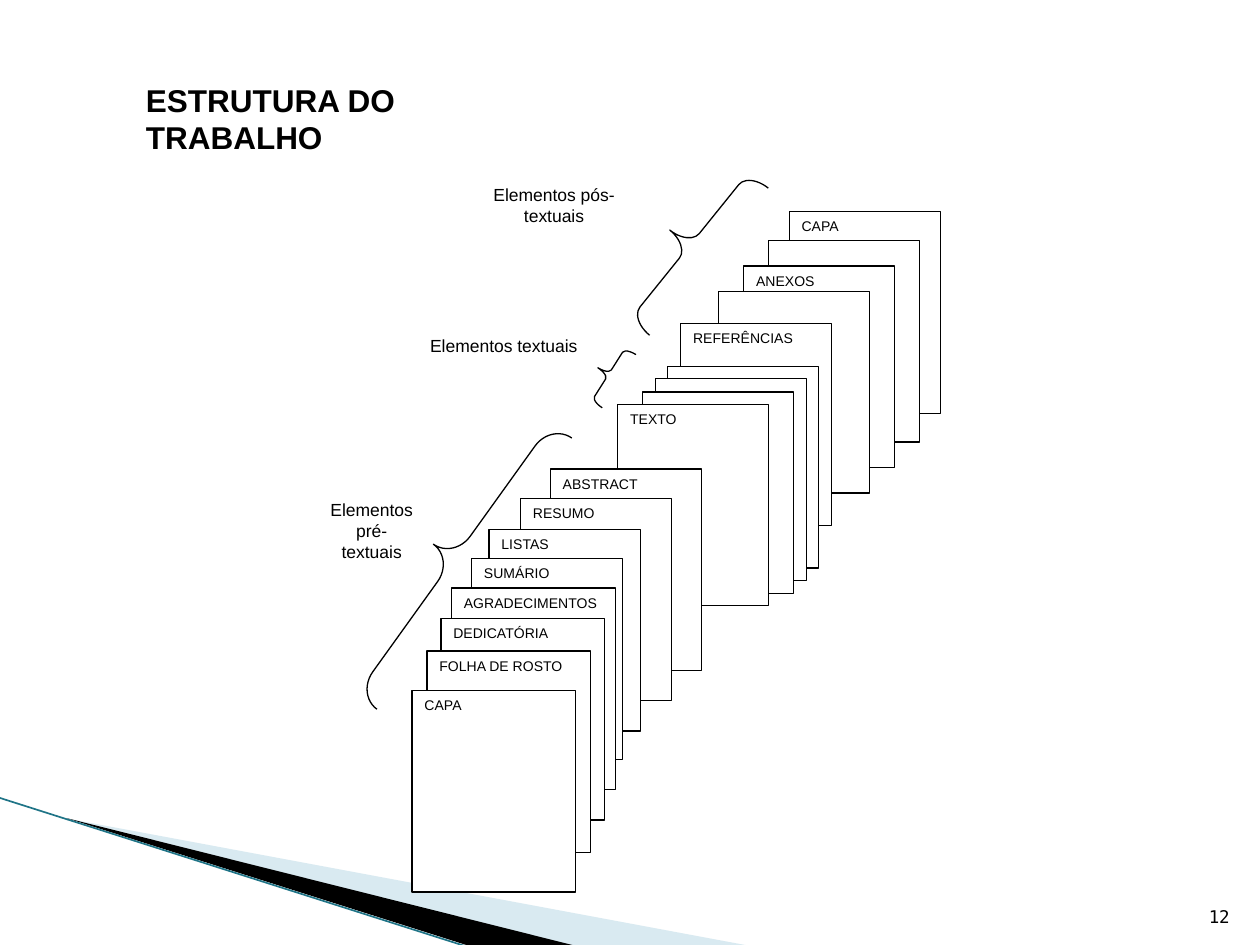
from lxml import etree
from pptx import Presentation
from pptx.dml.color import RGBColor
from pptx.enum import shapes, text
from pptx.oxml import ns
from pptx.util import Pt

BLACK = RGBColor(0x00, 0x00, 0x00)
WHITE = RGBColor(0xFF, 0xFF, 0xFF)
PALE_BLUE = RGBColor(0xA0, 0xCB, 0xDC)
TEAL = RGBColor(0x1F, 0x74, 0x87)

SANS = "Arial"
CARD_H = 115.2
NARROW, WIDE = 86.4, 93.6


def write(sp, words, size, align=text.PP_ALIGN.LEFT, anchor=text.MSO_ANCHOR.TOP,
          font=SANS, bold=False):
    tf = sp.text_frame
    tf.word_wrap = True
    tf.vertical_anchor = anchor
    p = tf.paragraphs[0]
    p.text = words
    p.alignment = align
    p.font.size = Pt(size)
    p.font.name = font
    p.font.bold = bold
    p.font.color.rgb = BLACK


def add_box(s, left, top, width, height, outlined=True):
    sp = s.shapes.add_shape(shapes.MSO_SHAPE.RECTANGLE,
                            Pt(left), Pt(top), Pt(width), Pt(height))
    sp.shadow.inherit = False
    sp.fill.solid()
    sp.fill.fore_color.rgb = WHITE
    if outlined:
        sp.line.color.rgb = BLACK
        sp.line.width = Pt(0.75)
    else:
        sp.line.fill.background()
    return sp


def add_brace(s, left, top, width, height, rotation, curve):
    sp = s.shapes.add_shape(shapes.MSO_SHAPE.LEFT_BRACE,
                            Pt(left), Pt(top), Pt(width), Pt(height))
    sp.shadow.inherit = False
    sp.rotation = rotation
    sp.adjustments[0] = curve
    sp.adjustments[1] = 0.5
    sp.fill.background()
    sp.line.color.rgb = BLACK
    sp.line.width = Pt(0.75)


def add_wedge(s, points, color, opacity=100):
    (x, y), *rest = [(Pt(x), Pt(y)) for x, y in points]
    builder = s.shapes.build_freeform(x, y)
    builder.add_line_segments(rest)
    sp = builder.convert_to_shape()
    sp.shadow.inherit = False
    sp.fill.solid()
    sp.fill.fore_color.rgb = color
    sp.line.fill.background()
    if opacity < 100:
        clr = sp.fill._xPr.find(".//" + ns.qn("a:srgbClr"))
        etree.SubElement(clr, ns.qn("a:alpha"), val=str(opacity * 1000))


def add_corner(s, left, top):
    """Decorative wedges and edge line at the lower left."""
    def at(*points):
        return [(left + x, top + y) for x, y in points]

    add_wedge(s, at((39.5, 12), (428.5, 84.5), (328, 84.5)), PALE_BLUE, 40)
    add_wedge(s, at((38, 11.5), (329, 84.5), (268, 84.5)), BLACK)
    line = s.shapes.add_connector(shapes.MSO_CONNECTOR.STRAIGHT, Pt(left), Pt(top),
                                  Pt(left + 267), Pt(top + 85))
    line.line.color.rgb = TEAL
    line.line.width = Pt(0.95)
    etree.SubElement(line._element.spPr, ns.qn("a:effectLst"))


def add_section(s, left, top, label, label_box, brace, cards):
    """Stack of cards from back to front, with its brace and label."""
    for x, y, width, name in cards:
        card = add_box(s, left + x, top + y, width, CARD_H)
        if name:
            write(card, name, 8)
    x, y, *shape = brace
    add_brace(s, left + x, top + y, *shape)
    x, y, *size = label_box
    sp = add_box(s, left + x, top + y, *size, outlined=False)
    write(sp, label, 10, text.PP_ALIGN.CENTER)


def add_text(s, left, top, width, height, words, size, **style):
    sp = s.shapes.add_textbox(Pt(left), Pt(top), Pt(width), Pt(height))
    write(sp, words, size, **style)


def main():
    prs = Presentation()
    prs.slide_width, prs.slide_height = Pt(720), Pt(540)
    s = prs.slides.add_slide(prs.slide_layouts[6])

    add_corner(s, 0, 456)
    add_section(
        s, 259, 86, "Elementos pós-textuais",
        (0, 15.5, 115.2, 28.8), (120.5, 0.5, 28.8, 108, 38.9, 0.313),
        [(192, 35, NARROW, "CAPA"), (180, 51.5, NARROW, ""),
         (166, 66, NARROW, "ANEXOS"), (151.5, 80.5, NARROW, ""),
         (130, 99, NARROW, "REFERÊNCIAS")])
    add_section(
        s, 237.5, 188, "Elementos textuais",
        (0, 0, 100.8, 21.6), (103, 8, 14.4, 36, 32.3, 0.209),
        [(144, 21.5, NARROW, ""), (137, 28.5, NARROW, ""),
         (129.5, 36, NARROW, ""), (115.5, 43, NARROW, "TEXTO")])
    add_section(
        s, 180, 224, "Elementos pré-textuais",
        (0, 57.5, 64.8, 43.2), (65, 0, 28.8, 190.8, 35.7, 0.553),
        [(134.5, 44, NARROW, "ABSTRACT"), (117.5, 61, NARROW, "RESUMO"),
         (99.5, 78.5, NARROW, "LISTAS"), (89.5, 95, NARROW, "SUMÁRIO"),
         (78, 112, WIDE, "AGRADECIMENTOS"), (72, 129.5, WIDE, "DEDICATÓRIA"),
         (64, 148, WIDE, "FOLHA DE ROSTO"), (55.5, 170.5, WIDE, "CAPA")])
    add_text(s, 76.3, 42.5, 209.5, 94.3, "ESTRUTURA DO TRABALHO", 18, bold=True)
    add_text(s, 681, 504.7, 28.8, 28.8, "12", 10, align=text.PP_ALIGN.RIGHT,
             anchor=text.MSO_ANCHOR.BOTTOM, font="DejaVu Sans Mono")
    prs.save("out.pptx")


if __name__ == "__main__":
    main()
